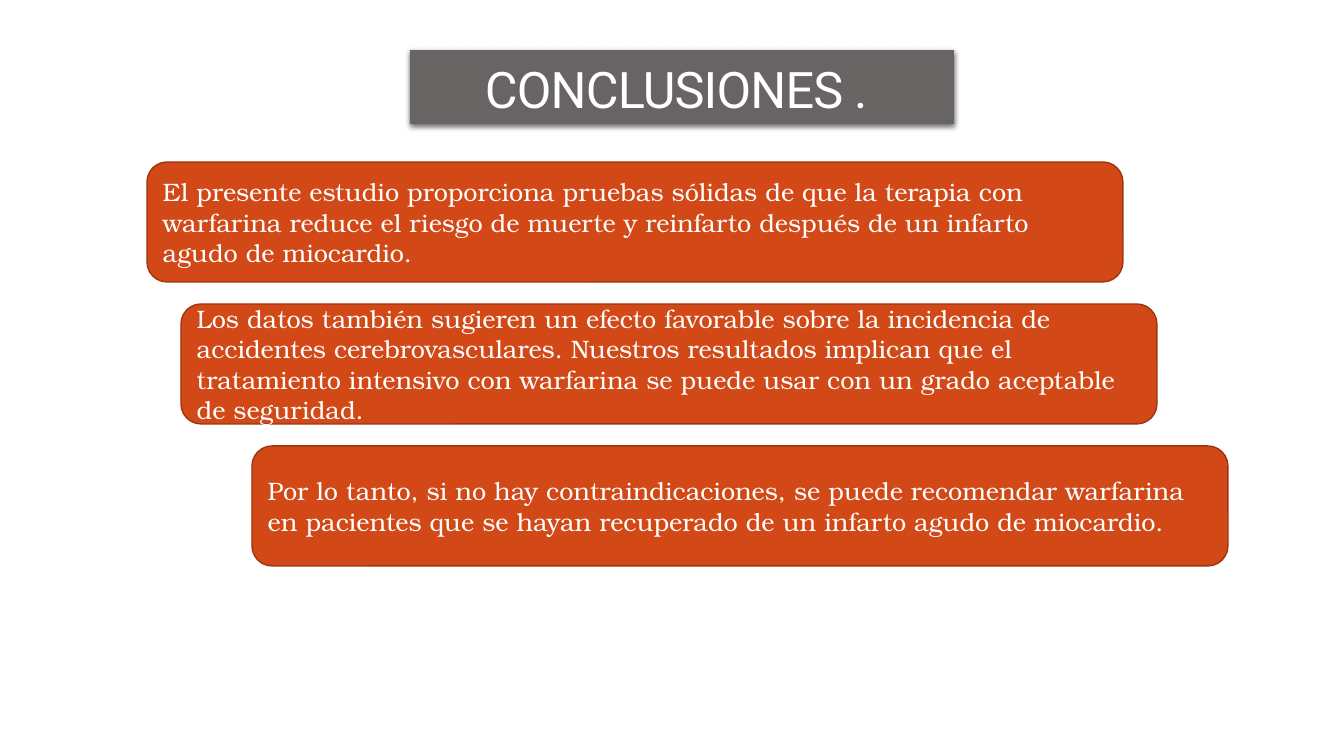
import pptx
import pptx.dml.color
import pptx.enum.shapes
import pptx.enum.text
import pptx.oxml
import pptx.oxml.ns
import pptx.util

SHAPE = pptx.enum.shapes.MSO_SHAPE
ALIGN = pptx.enum.text.PP_ALIGN
ANCHOR = pptx.enum.text.MSO_ANCHOR

EMU_PER_PX = 914400 / 100.8
COLORS = {"title": "696464", "card": "D34817", "border": "9C3511", "text": "FFFFFF"}
TITLE_SHADOW = (
    f'<a:effectLst {pptx.oxml.ns.nsdecls("a")}>'
    '<a:outerShdw blurRad="50800" dist="19050" dir="5400000" rotWithShape="0">'
    '<a:srgbClr val="000000"><a:alpha val="60000"/></a:srgbClr>'
    '</a:outerShdw></a:effectLst>'
)

CONCLUSIONS = [
    (147, "El presente estudio proporciona pruebas sólidas de que la terapia con warfarina "
          "reduce el riesgo de muerte y reinfarto después de un infarto agudo de miocardio."),
    (181, "Los datos también sugieren un efecto favorable sobre la incidencia de accidentes "
          "cerebrovasculares. Nuestros resultados implican que el tratamiento intensivo con "
          "warfarina se puede usar con un grado aceptable de seguridad."),
    (252, "Por lo tanto, si no hay contraindicaciones, se puede recomendar warfarina en "
          "pacientes que se hayan recuperado de un infarto agudo de miocardio."),
]
CARD_TOP, CARD_PITCH, CARD_W, CARD_H = 162, 142, 976, 120


def px(n):
    return pptx.util.Emu(round(n * EMU_PER_PX))


def rgb(name):
    return pptx.dml.color.RGBColor.from_string(COLORS[name])


class SlideBuilder:
    """Holds the current slide and draws its elements in the deck's style."""

    def __init__(self, prs):
        self.slide = prs.slides.add_slide(prs.slide_layouts[6])

    def box(self, kind, x, y, w, h, fill):
        sp = self.slide.shapes.add_shape(kind, px(x), px(y), px(w), px(h))
        sp.fill.solid()
        sp.fill.fore_color.rgb = rgb(fill)
        sp.line.fill.background()
        sp.shadow.inherit = False
        return sp

    def add_text(self, sp, text, font, size, align, anchor):
        tf = sp.text_frame
        tf.word_wrap = True
        tf.vertical_anchor = anchor
        p = tf.paragraphs[0]
        p.alignment = align
        p.font.name = font
        p.font.size = pptx.util.Pt(size)
        p.font.color.rgb = rgb("text")
        r = p.add_run()
        r.text = text
        return r

    def title(self, text, x, y, w, h):
        sp = self.box(SHAPE.RECTANGLE, x, y, w, h, "title")
        spPr = sp._element.spPr
        spPr.remove(spPr.find(pptx.oxml.ns.qn("a:effectLst")))
        spPr.append(pptx.oxml.parse_xml(TITLE_SHADOW))
        r = self.add_text(sp, text, "Roboto", 36, ALIGN.CENTER, ANCHOR.BOTTOM)
        r._r.get_or_add_rPr().set("spc", "-60")

    def card(self, text, x, y, w, h):
        sp = self.box(SHAPE.ROUNDED_RECTANGLE, x, y, w, h, "card")
        sp.line.color.rgb = rgb("border")
        sp.line.width = pptx.util.Pt(1)
        self.add_text(sp, text, "TeX Gyre Bonum", 18, ALIGN.LEFT, ANCHOR.MIDDLE)


def main():
    prs = pptx.Presentation()
    prs.slide_width, prs.slide_height = px(1344), px(756)
    s = SlideBuilder(prs)
    s.title("CONCLUSIONES . ", 410, 50, 544, 74)
    for i, (x, text) in enumerate(CONCLUSIONS):
        s.card(text, x, CARD_TOP + i * CARD_PITCH, CARD_W, CARD_H)
    prs.save("out.pptx")


if __name__ == "__main__":
    main()
